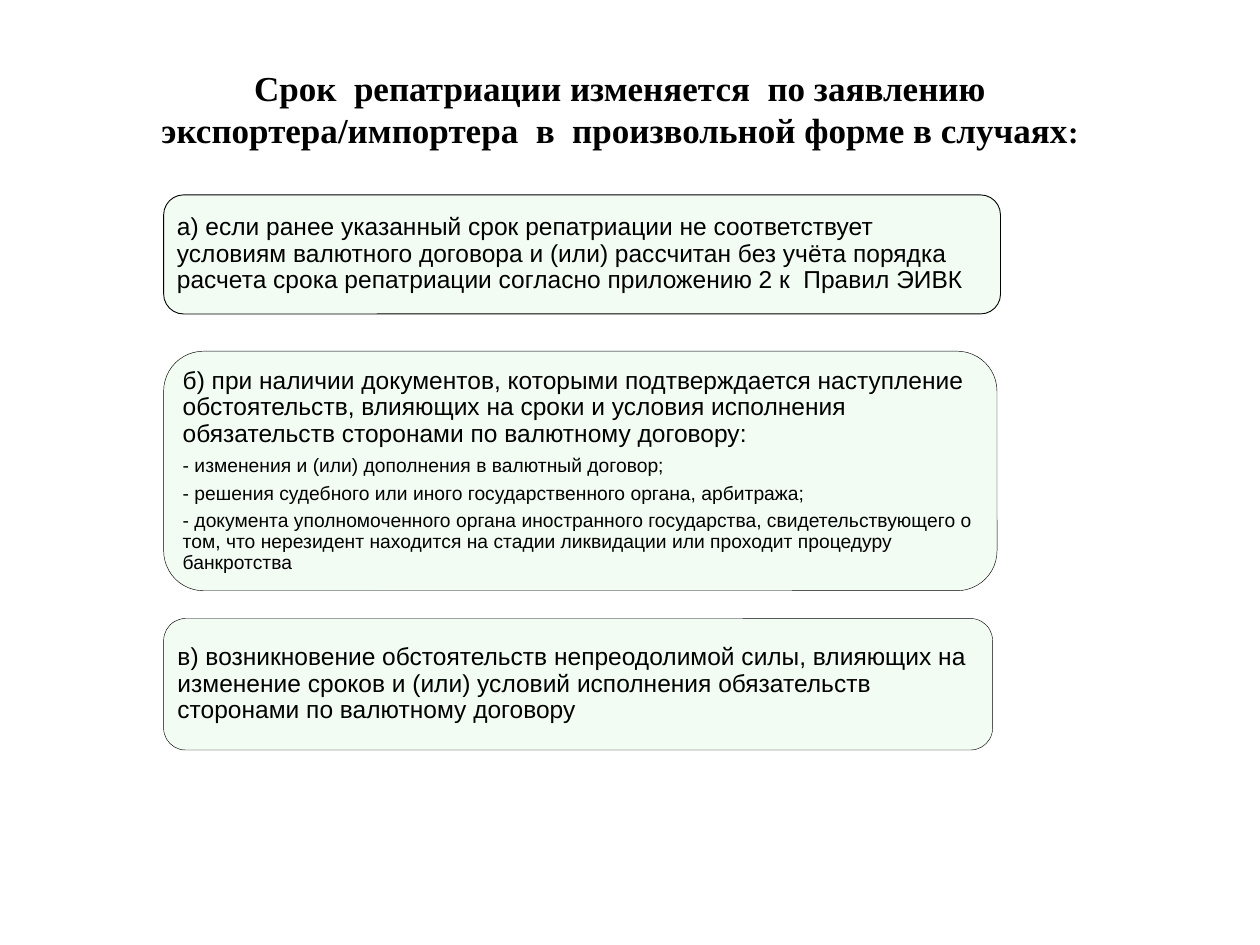
from pptx import Presentation
from pptx.dml.color import RGBColor
from pptx.enum.shapes import MSO_SHAPE
from pptx.enum.text import MSO_ANCHOR, MSO_AUTO_SIZE, PP_ALIGN
from pptx.util import Cm, Pt

BLACK = "000000"
PALE_GREEN = "F2FCF2"
CARD_LEFT = 3.3
MAIN_SIZE = 14
DETAIL_SIZE = 11

TITLE_RUNS = [
    ("Срок  репатриации изменяется  по заявлению экспортера/импортера  в  произвольной форме в случаях", 20),
    (":", 18),
]

CARDS = [
    {
        "top": 3.93, "width": 16.87, "height": 2.4, "line_width": 0.5,
        "main": "а) если ранее указанный срок репатриации не соответствует условиям валютного договора "
                "и (или) рассчитан без учёта порядка расчета срока репатриации согласно приложению 2 к  Правил ЭИВК",
        "details": [],
    },
    {
        "top": 7.08, "width": 16.8, "height": 4.83, "line_width": 0.25,
        "main": "б) при наличии документов, которыми подтверждается наступление обстоятельств, влияющих "
                "на сроки и условия исполнения обязательств сторонами по валютному договору:",
        "details": [
            "- изменения и (или) дополнения в валютный договор;",
            "- решения судебного или иного государственного органа, арбитража;",
            "- документа уполномоченного органа иностранного государства, свидетельствующего о том, "
            "что нерезидент находится на стадии ликвидации или проходит процедуру банкротства",
        ],
    },
    {
        "top": 12.47, "width": 16.71, "height": 2.65, "line_width": 0.25,
        "main": "в) возникновение обстоятельств непреодолимой силы, влияющих на изменение сроков "
                "и (или) условий исполнения обязательств сторонами по валютному договору",
        "details": [],
    },
]


def color(value):
    return RGBColor.from_string(value)


def apply_format(target, values):
    for name, value in values.items():
        setattr(target, name, value)


def add_run(paragraph, text, font_name, size, bold=False):
    run = paragraph.add_run()
    run.text = text
    apply_format(run.font, {"name": font_name, "size": Pt(size), "bold": bold})
    run.font.color.rgb = color(BLACK)


def format_title(title):
    apply_format(title, {"left": Cm(1.6), "top": Cm(1.22), "width": Cm(21.8), "height": Cm(2)})
    apply_format(title.text_frame, {
        "word_wrap": True, "auto_size": MSO_AUTO_SIZE.NONE, "vertical_anchor": MSO_ANCHOR.TOP,
    })
    paragraph = title.text_frame.paragraphs[0]
    apply_format(paragraph, {"alignment": PP_ALIGN.CENTER, "space_before": Pt(0), "line_spacing": 1.0})
    for text, size in TITLE_RUNS:
        add_run(paragraph, text, "Times New Roman", size, bold=True)


def add_card(slide, card):
    shape = slide.shapes.add_shape(
        MSO_SHAPE.ROUNDED_RECTANGLE,
        Cm(CARD_LEFT), Cm(card["top"]), Cm(card["width"]), Cm(card["height"]),
    )
    shape.shadow.inherit = False
    shape.fill.solid()
    shape.fill.fore_color.rgb = color(PALE_GREEN)
    shape.line.color.rgb = color(BLACK)
    shape.line.width = Pt(card["line_width"])
    frame = shape.text_frame
    apply_format(frame, {"word_wrap": True, "vertical_anchor": MSO_ANCHOR.MIDDLE})
    apply_format(frame, {f"margin_{side}": Cm(0.15) for side in ("left", "top", "right", "bottom")})
    texts = [(card["main"], MAIN_SIZE)] + [(text, DETAIL_SIZE) for text in card["details"]]
    for index, (text, size) in enumerate(texts):
        paragraph = frame.add_paragraph() if index else frame.paragraphs[0]
        apply_format(paragraph, {
            "alignment": PP_ALIGN.LEFT, "line_spacing": 0.9, "space_after": Pt(size * 0.35),
        })
        add_run(paragraph, text, "Arial", size)


def main():
    presentation = Presentation()
    apply_format(presentation, {"slide_width": Cm(25.4), "slide_height": Cm(19.05)})
    slide = presentation.slides.add_slide(presentation.slide_layouts[5])
    format_title(slide.shapes.title)
    for card in CARDS:
        add_card(slide, card)
    presentation.save("out.pptx")


if __name__ == "__main__":
    main()
